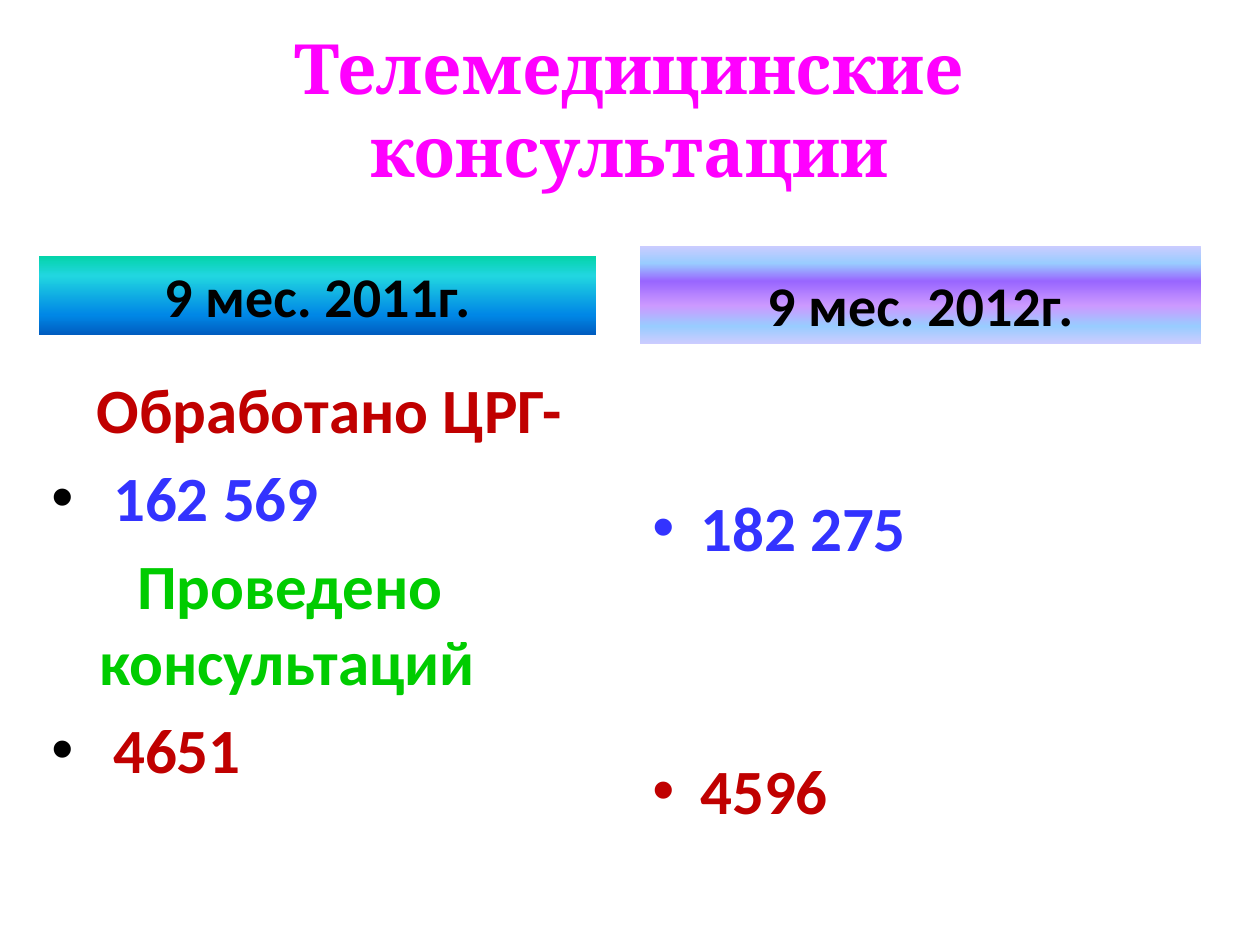
from copy import deepcopy
from dataclasses import dataclass

from lxml.etree import SubElement
from pptx import Presentation
from pptx.dml.color import RGBColor
from pptx.enum.shapes import MSO_SHAPE
from pptx.enum.text import MSO_ANCHOR, PP_ALIGN
from pptx.oxml.ns import qn
from pptx.util import Inches, Pt


@dataclass(frozen=True)
class Theme:
    """Colours, fonts and type sizes of the slide."""
    heading_font: str = "Cambria"
    body_font: str = "Calibri"
    heading_size: float = 39.6
    heading_leading: float = 47.5
    period_size: float = 32
    body_size: float = 36
    paragraph_gap: float = 7.2
    magenta: str = "FF00FF"
    black: str = "000000"
    red: str = "C00000"
    blue: str = "3333FF"
    green: str = "00CC00"
    ocean: tuple = ((0, "03D4A8"), (25, "21D6E0"), (75, "0087E6"), (100, "005CBF"))
    lilac: tuple = ((0, "CCCCFF"), (18, "99CCFF"), (36, "9966FF"),
                    (61, "CC99FF"), (82, "99CCFF"), (100, "CCCCFF"))


@dataclass(frozen=True)
class Line:
    """One paragraph of a results column, with indents in inches."""
    text: str
    color: str
    margin: float = 0
    first: float = 0
    bullet: str = ""
    gap: float = Theme.paragraph_gap
    align: PP_ALIGN = PP_ALIGN.LEFT


class SlideBuilder:
    """Places styled elements on a grid of 100 columns by 75 rows."""

    def __init__(self, deck, theme):
        """Start a title-only slide."""
        self.theme = theme
        self.column = deck.slide_width / 100
        self.row = deck.slide_height / 75
        self.slide = deck.slides.add_slide(deck.slide_layouts[5])

    def box(self, left, top, width, height):
        """Convert grid cells into slide lengths."""
        return (round(left * self.column), round(top * self.row),
                round(width * self.column), round(height * self.row))

    def style(self, paragraph, font, size, color, align):
        """Format a whole paragraph in bold."""
        paragraph.alignment = align
        paragraph.font.name = font
        paragraph.font.size = Pt(size)
        paragraph.font.bold = True
        paragraph.font.color.rgb = RGBColor.from_string(color)

    def title(self, text, *cells):
        """Fill and place the title placeholder."""
        heading = self.slide.shapes.title
        heading.left, heading.top, heading.width, heading.height = self.box(*cells)
        heading.text_frame.text = text
        heading.text_frame.vertical_anchor = MSO_ANCHOR.MIDDLE
        paragraph = heading.text_frame.paragraphs[0]
        paragraph.line_spacing = Pt(self.theme.heading_leading)
        self.style(paragraph, self.theme.heading_font, self.theme.heading_size,
                   self.theme.magenta, PP_ALIGN.CENTER)

    def period(self, text, gradient, *cells):
        """Add a period banner with a vertical gradient."""
        banner = self.slide.shapes.add_shape(MSO_SHAPE.RECTANGLE, *self.box(*cells))
        banner.shadow.inherit = False
        banner.line.fill.background()
        banner.fill.gradient()
        banner.fill.gradient_angle = 270
        stop_list = banner._element.spPr.find(qn("a:gradFill")).find(qn("a:gsLst"))
        for _ in gradient[2:]:
            stop_list.append(deepcopy(stop_list[0]))
        for stop, (percent, color) in zip(banner.fill.gradient_stops, gradient):
            stop.position = percent / 100
            stop.color.rgb = RGBColor.from_string(color)
        banner.text_frame.text = text
        banner.text_frame.vertical_anchor = MSO_ANCHOR.BOTTOM
        self.style(banner.text_frame.paragraphs[0], self.theme.body_font,
                   self.theme.period_size, self.theme.black, PP_ALIGN.CENTER)

    def results(self, lines, inset, *cells):
        """Add a results column whose text starts below a top inset in inches."""
        frame = self.slide.shapes.add_textbox(*self.box(*cells)).text_frame
        frame.word_wrap = True
        frame.margin_top = Inches(inset)
        for index, line in enumerate(lines):
            paragraph = frame.add_paragraph() if index else frame.paragraphs[0]
            paragraph.text = line.text
            paragraph.space_before = Pt(line.gap if index else 0)
            self.style(paragraph, self.theme.body_font, self.theme.body_size,
                       line.color, line.align)
            self.indent(paragraph, line)

    def indent(self, paragraph, line):
        """Set the paragraph's indents and its bullet."""
        properties = paragraph._p.get_or_add_pPr()
        properties.set("marL", str(Inches(line.margin)))
        properties.set("indent", str(Inches(line.first)))
        if line.bullet:
            bullet_color = SubElement(properties, qn("a:buClr"))
            SubElement(bullet_color, qn("a:srgbClr"), val=line.bullet)
            SubElement(properties, qn("a:buFont"), typeface="Arial")
            SubElement(properties, qn("a:buChar"), char="•")
            properties.append(properties.find(qn("a:defRPr")))


def main():
    """Build the telemedicine slide."""
    deck = Presentation()
    deck.slide_width, deck.slide_height = Inches(10), Inches(7.5)
    theme = Theme()
    builder = SlideBuilder(deck, theme)
    builder.title("Телемедицинские консультации", 2.3, 0, 95.3, 17.2)
    builder.period("9 мес. 2011г.", theme.ocean, 3.1, 20.3, 44.2, 6.3)
    builder.results([
        Line("Обработано ЦРГ-", theme.red, align=PP_ALIGN.CENTER),
        Line("162 569", theme.blue, 0.49, -0.49, theme.black),
        Line("Проведено консультаций", theme.green, 0.38, 0.3),
        Line("4651", theme.red, 0.49, -0.49, theme.black),
    ], 0.56, 3.1, 23.8, 46.1, 44.2)
    builder.period("9 мес. 2012г.", theme.lilac, 50.8, 19.5, 44.5, 7.8)
    builder.results([
        Line("182 275", theme.blue, 0.38, -0.38, theme.blue),
        Line("4596", theme.red, 0.38, -0.38, theme.red, gap=107),
    ], 1.5, 50.8, 23.8, 44.2, 43.2)
    deck.save("out.pptx")


if __name__ == "__main__":
    main()
